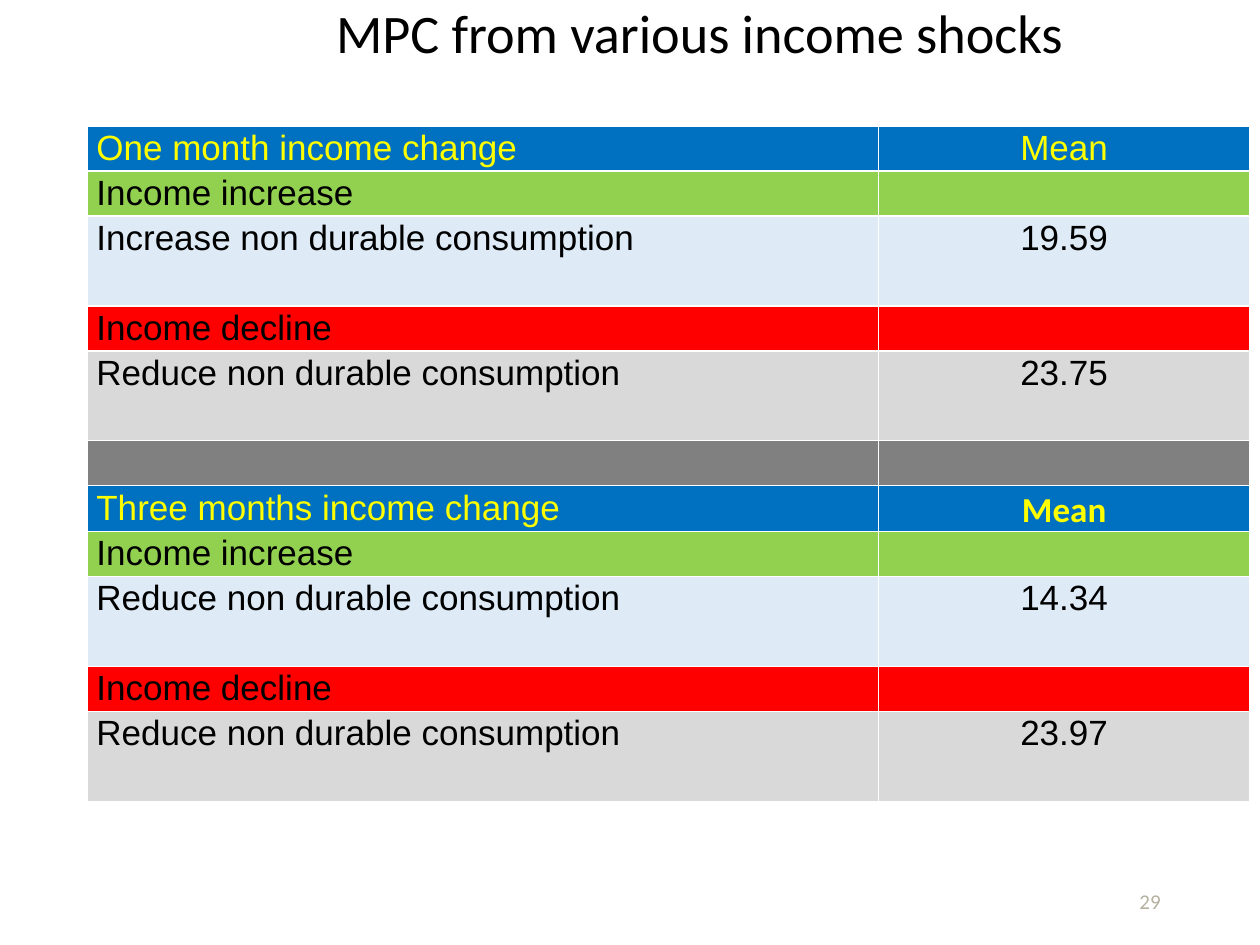
"""Build the slide of consumption responses to income shocks."""
from dataclasses import dataclass

from lxml import etree
from pptx import Presentation
from pptx.dml.color import RGBColor
from pptx.enum import text
from pptx.oxml import ns
from pptx.util import Pt


@dataclass(frozen=True)
class Theme:
    """Colours, fonts and type sizes."""
    body: str = "Arial"
    heading: str = "Calibri"
    title_size: float = 31
    table_size: float = 20
    number_size: float = 12
    black: str = "000000"
    white: str = "FFFFFF"
    yellow: str = "FFFF00"
    blue: str = "0070C0"
    green: str = "92D050"
    red: str = "FF0000"
    pale: str = "DEEBF7"
    light: str = "D9D9D9"
    grey: str = "808080"
    number: str = "B4B1A0"


@dataclass(frozen=True)
class Row:
    """One table row."""
    label: str
    value: str
    fill: str
    color: str = Theme.black
    lines: int = 1
    strong: bool = False


T = Theme()
LINE = 25.7
COLUMNS = (452.2, 212.4)


def block(span: str, rise: str, rise_mpc: str, fall_mpc: str, strong: bool) -> list[Row]:
    """Return the five rows for one length of income change."""
    return [
        Row(f"{span} income change", "Mean", T.blue, T.yellow, strong=strong),
        Row("Income increase", "", T.green),
        Row(f"{rise} non durable consumption", rise_mpc, T.pale, lines=2),
        Row("Income decline", "", T.red),
        Row("Reduce non durable consumption", fall_mpc, T.light, lines=2),
    ]


ROWS = [
    *block("One month", "Increase", "19.59", "23.75", False),
    Row("", "", T.grey),
    *block("Three months", "Reduce", "14.34", "23.97", True),
]


def add_run(p, words: str, size: float, font: str, color: str, bold: bool = False) -> None:
    """Add a formatted run to a paragraph."""
    r = p.add_run()
    r.text = words
    r.font.size = Pt(size)
    r.font.name = font
    r.font.bold = bold
    r.font.color.rgb = RGBColor.from_string(color)


def set_borders(cell, color: str, width: float) -> None:
    """Draw a solid line on all four sides of a cell."""
    pr = cell._tc.get_or_add_tcPr()
    for i, side in enumerate(("lnL", "lnR", "lnT", "lnB")):
        ln = etree.Element(ns.qn(f"a:{side}"), w=str(Pt(width)))
        fill = etree.SubElement(ln, ns.qn("a:solidFill"))
        etree.SubElement(fill, ns.qn("a:srgbClr"), val=color)
        pr.insert(i, ln)


def fill_cell(cell, words: str, row: Row, align, bold: bool) -> None:
    """Format one table cell and write its text."""
    cell.margin_left = cell.margin_right = Pt(5.4)
    cell.margin_top = cell.margin_bottom = 0
    cell.fill.solid()
    cell.fill.fore_color.rgb = RGBColor.from_string(row.fill)
    set_borders(cell, T.white, 1)
    if words:
        p = cell.text_frame.paragraphs[0]
        p.alignment = align
        p.line_spacing = 1.07
        add_run(p, words, T.table_size, T.heading if bold else T.body, row.color, bold)


def add_title(s, words: str) -> None:
    """Place the title in its placeholder, raised by one line."""
    sp = s.shapes.title
    sp.left, sp.top, sp.width, sp.height = Pt(95.8), Pt(-18), Pt(607.7), Pt(111.6)
    tf = sp.text_frame
    tf.vertical_anchor = text.MSO_ANCHOR.MIDDLE
    tf.margin_bottom = Pt(37.6)
    p = tf.paragraphs[0]
    p.alignment = text.PP_ALIGN.CENTER
    p.line_spacing = 0.9
    add_run(p, words, T.title_size, T.heading, T.black)


def add_mpc_table(s, rows: list[Row]) -> None:
    """Add the table of mean responses."""
    heights = [LINE * row.lines for row in rows]
    tbl = s.shapes.add_table(len(rows), len(COLUMNS), Pt(49.7), Pt(72),
                             Pt(sum(COLUMNS)), Pt(sum(heights))).table
    tbl.first_row = tbl.horz_banding = False
    for col, width in zip(tbl.columns, COLUMNS):
        col.width = Pt(width)
    for i, (row, height) in enumerate(zip(rows, heights)):
        tbl.rows[i].height = Pt(height)
        fill_cell(tbl.cell(i, 0), row.label, row, text.PP_ALIGN.LEFT, False)
        fill_cell(tbl.cell(i, 1), row.value, row, text.PP_ALIGN.CENTER, row.strong)


def add_page_number(s, number: str) -> None:
    """Add the page number at the lower right."""
    tf = s.shapes.add_textbox(Pt(508.3), Pt(500.4), Pt(162), Pt(28.8)).text_frame
    tf.word_wrap = True
    tf.vertical_anchor = text.MSO_ANCHOR.MIDDLE
    p = tf.paragraphs[0]
    p.alignment = text.PP_ALIGN.RIGHT
    add_run(p, number, T.number_size, T.heading, T.number)


def main() -> None:
    """Build and save the presentation."""
    prs = Presentation()
    prs.slide_width, prs.slide_height = Pt(720), Pt(540)
    s = prs.slides.add_slide(prs.slide_layouts[5])
    add_title(s, "MPC from various income shocks")
    add_mpc_table(s, ROWS)
    add_page_number(s, "29")
    prs.save("out.pptx")


if __name__ == "__main__":
    main()
